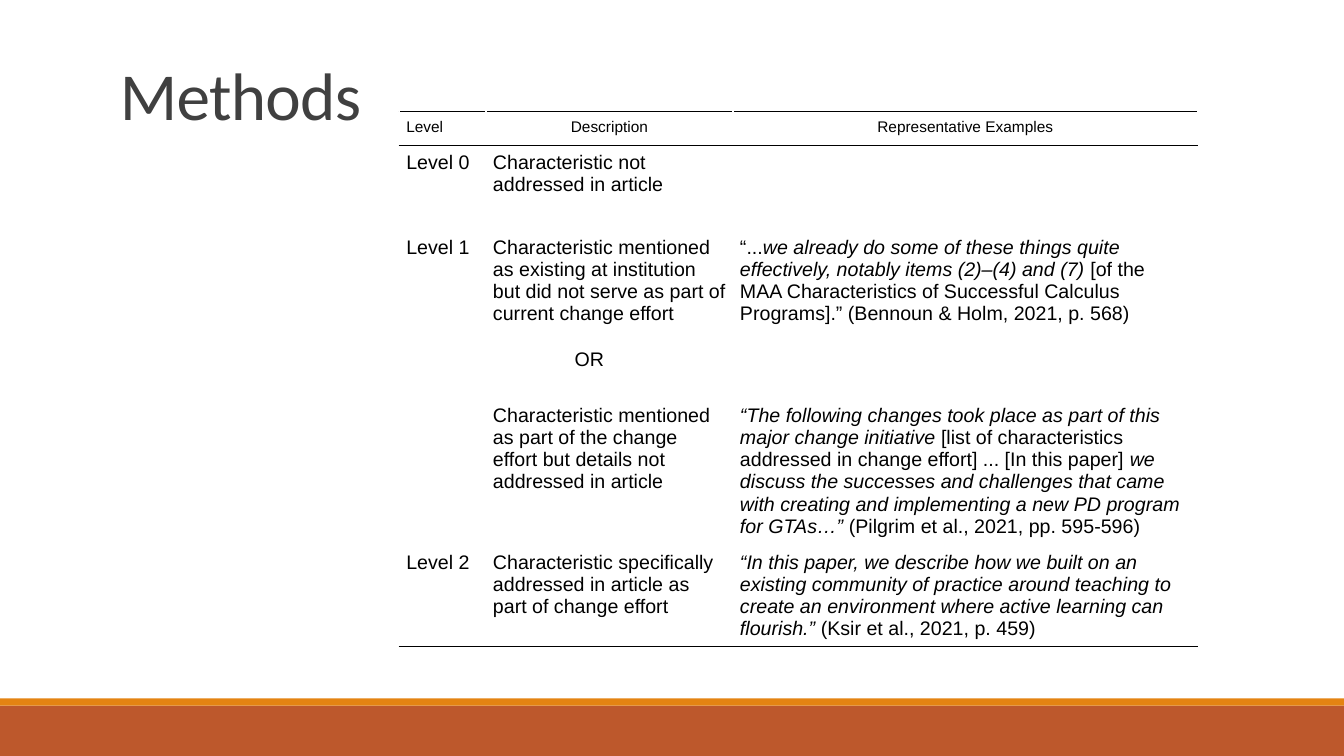
from lxml.etree import SubElement
from pptx import Presentation
from pptx.dml.color import RGBColor
from pptx.enum.shapes import MSO_SHAPE
from pptx.enum.text import MSO_ANCHOR, MSO_AUTO_SIZE, PP_ALIGN
from pptx.oxml.ns import qn
from pptx.util import Inches, Pt

# Content: a cell is a list of paragraphs, a paragraph a list of (text, italic)
TITLE = "Methods"
SEPARATOR = "OR"


def plain(text):
    return [[(text, False)]]


ROWS = [
    [plain("Level"), plain("Description"), plain("Representative Examples")],
    [plain("Level 0"), plain("Characteristic not addressed in article"), []],
    [
        plain("Level 1"),
        plain("Characteristic mentioned as existing at institution but did not "
              "serve as part of current change effort") + plain(SEPARATOR),
        [[
            ("“...", False),
            ("we already do some of these things quite effectively, notably "
             "items (2)–(4) and (7)", True),
            (" [of the MAA Characteristics of Successful Calculus Programs].” "
             "(Bennoun & Holm, 2021, p. 568)", False),
        ]],
    ],
    [
        [],
        plain("Characteristic mentioned as part of the change effort but "
              "details not addressed in article"),
        [[
            ("“The following changes took place as part of this major change "
             "initiative", True),
            (" [list of characteristics addressed in change effort] ... "
             "[In this paper] ", False),
            ("we discuss the successes and challenges that came with creating "
             "and implementing a new PD program for GTAs…”", True),
            (" (Pilgrim et al., 2021, pp. 595-596)", False),
        ]],
    ],
    [
        plain("Level 2"),
        plain("Characteristic specifically addressed in article as part of "
              "change effort"),
        [[
            ("“In this paper, we describe how we built on an existing community "
             "of practice around teaching to create an environment where active "
             "learning can flourish.”", True),
            (" (Ksir et al., 2021, p. 459)", False),
        ]],
    ],
]

# Layout, in inches
COLUMN_WIDTHS = [0.86, 2.45, 4.61]
ROW_HEIGHTS = [0.33, 0.84, 1.67, 1.4, 0.99]
TABLE_LEFT, TABLE_TOP = 3.96, 1.11
CELL_INSET = 0.07
RULED_SIDES = {0: ("lnT", "lnB"), 1: ("lnT",), len(ROWS) - 1: ("lnB",)}
BARS = [("rust", 7, 0.5), ("orange", 6.93, 0.07)]


class Theme:
    colors = {"rust": "BD582C", "orange": "E48312", "title": "404040", "text": "000000"}
    title_font, body_font = "Calibri", "Arial"
    title_size, header_size, body_size = Pt(48), Pt(11), Pt(14)
    rule_width = Pt(1)


def color(name):
    return RGBColor.from_string(Theme.colors[name])


def set_all(target, values):
    for name, value in values.items():
        setattr(target, name, value)


def format_span(span, font_name, size, color_name, italic=False):
    set_all(span.font, {"name": font_name, "size": size, "italic": italic, "bold": False})
    span.font.color.rgb = color(color_name)


def add_title(page):
    title = page.shapes.title
    set_all(title, {"left": Inches(1.09), "top": Inches(-0.21),
                    "width": Inches(11), "height": Inches(1.59)})
    set_all(title.text_frame, {"vertical_anchor": MSO_ANCHOR.BOTTOM, "word_wrap": True,
                               "auto_size": MSO_AUTO_SIZE.NONE})
    para = title.text_frame.paragraphs[0]
    set_all(para, {"alignment": PP_ALIGN.LEFT, "line_spacing": 0.85})
    span = para.add_run()
    span.text = TITLE
    format_span(span, Theme.title_font, Theme.title_size, "title")
    span._r.get_or_add_rPr().set("spc", "-50")


def add_bar(page, width, color_name, top, height):
    bar = page.shapes.add_shape(MSO_SHAPE.RECTANGLE, 0, Inches(top), width, Inches(height))
    bar.shadow.inherit = False
    bar.fill.solid()
    bar.fill.fore_color.rgb = color(color_name)
    bar.line.fill.background()


def add_rule(cell, side):
    properties = cell._tc.get_or_add_tcPr()
    line = SubElement(properties, qn(f"a:{side}"), w=str(int(Theme.rule_width)))
    fill = SubElement(line, qn("a:solidFill"))
    SubElement(fill, qn("a:srgbClr"), val=Theme.colors["text"])


def fill_cell(cell, paragraphs, is_header, is_centered):
    frame = cell.text_frame
    size = Theme.header_size if is_header else Theme.body_size
    for index, spans in enumerate(paragraphs):
        para = frame.add_paragraph() if index else frame.paragraphs[0]
        para.alignment = PP_ALIGN.CENTER if is_centered else PP_ALIGN.LEFT
        if spans[0][0] == SEPARATOR:
            para.space_before = Pt(17)
            para._p.get_or_add_pPr().set("marL", str(Inches(0.81)))
        for text, italic in spans:
            span = para.add_run()
            span.text = text
            format_span(span, Theme.body_font, size, "text", italic)


def add_levels_table(page):
    frame = page.shapes.add_table(
        len(ROWS), len(COLUMN_WIDTHS), Inches(TABLE_LEFT), Inches(TABLE_TOP),
        Inches(sum(COLUMN_WIDTHS)), Inches(sum(ROW_HEIGHTS)))
    table = frame.table
    set_all(table, {"first_row": False, "horz_banding": False})
    for column, width in zip(table.columns, COLUMN_WIDTHS):
        column.width = Inches(width)
    for row, height in zip(table.rows, ROW_HEIGHTS):
        row.height = Inches(height)
    table.cell(2, 0).merge(table.cell(3, 0))

    sides = ("margin_left", "margin_right", "margin_top", "margin_bottom")
    for row_index, row in enumerate(ROWS):
        for column_index, paragraphs in enumerate(row):
            cell = table.cell(row_index, column_index)
            set_all(cell, dict.fromkeys(sides, Inches(CELL_INSET)))
            for side in RULED_SIDES.get(row_index, ()):
                add_rule(cell, side)
            cell.fill.background()
            is_header = row_index == 0
            fill_cell(cell, paragraphs, is_header, is_header and column_index > 0)


def main():
    deck = Presentation()
    set_all(deck, {"slide_width": Inches(13.33), "slide_height": Inches(7.5)})
    page = deck.slides.add_slide(deck.slide_layouts[5])

    # Footer bars
    for bar in BARS:
        add_bar(page, deck.slide_width, *bar)

    # Title and table
    add_title(page)
    add_levels_table(page)
    deck.save("out.pptx")


if __name__ == "__main__":
    main()
